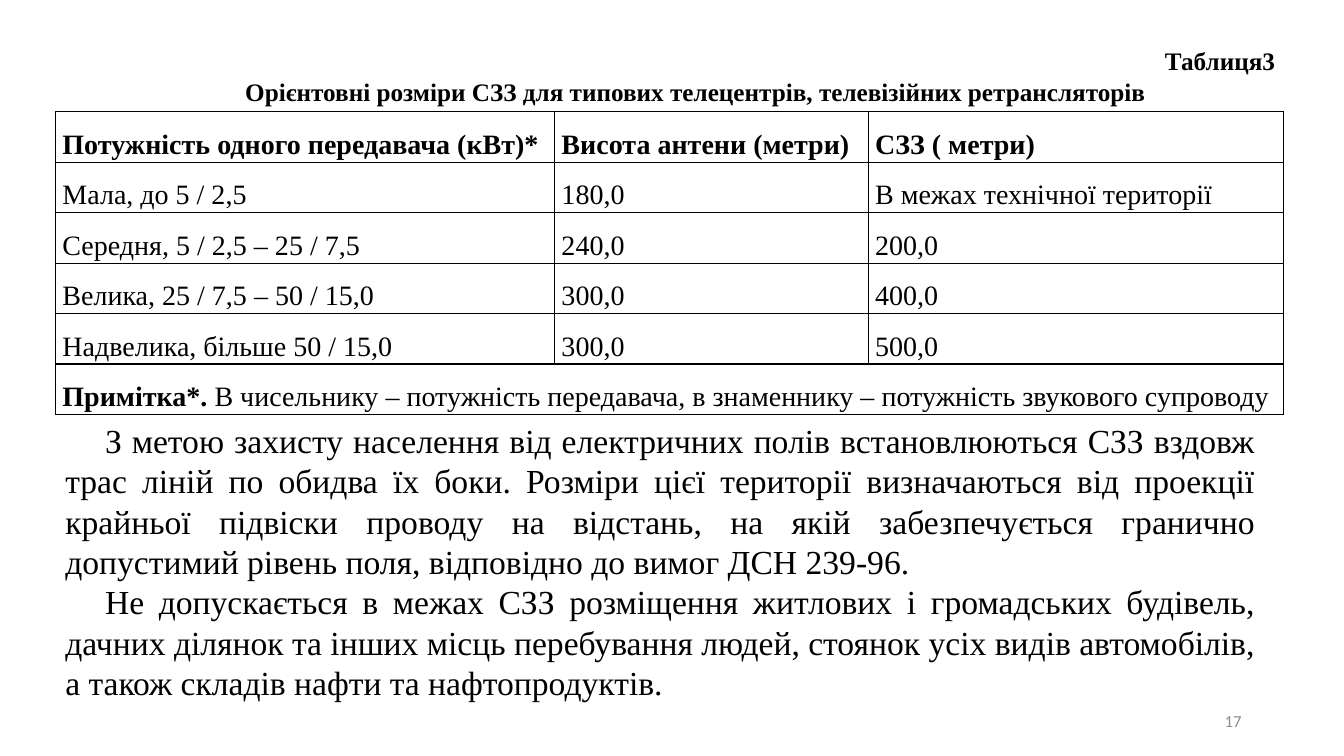
import pptx
import pptx.dml.color
import pptx.enum.text
import pptx.oxml
import pptx.oxml.ns
import pptx.util

Pt = pptx.util.Pt
ALIGN = pptx.enum.text.PP_ALIGN
MIDDLE = pptx.enum.text.MSO_ANCHOR.MIDDLE
SERIF = "Times New Roman"


def color(hex_string):
    return pptx.dml.color.RGBColor.from_string(hex_string)


def style(paragraph, size, align, bold=False, font=SERIF, ink="000000"):
    paragraph.alignment = align
    for run in paragraph.runs:
        run.font.name = font
        run.font.size = Pt(size)
        run.font.bold = bold
        run.font.color.rgb = color(ink)


deck = pptx.Presentation()
deck.slide_width, deck.slide_height = Pt(960), Pt(540)
slide = deck.slides.add_slide(deck.slide_layouts[5])

# Table number and caption
caption = slide.shapes.title
caption.left, caption.top, caption.width, caption.height = Pt(75.6), Pt(28.8), Pt(842.4), Pt(51)
caption.text_frame.text = (
    "Таблиця3\n"
    "Орієнтовні розміри СЗЗ для типових телецентрів, телевізійних ретрансляторів"
)
caption.text_frame.vertical_anchor = MIDDLE
caption.text_frame.auto_size = pptx.enum.text.MSO_AUTO_SIZE.SHAPE_TO_FIT_TEXT
for paragraph, align in zip(caption.text_frame.paragraphs, (ALIGN.RIGHT, ALIGN.CENTER)):
    style(paragraph, 18, align, bold=True)

# Zone sizes by transmitter power
zone_rows = [
    ("Потужність одного передавача (кВт)*", "Висота антени (метри)", "СЗЗ ( метри)"),
    ("Мала, до 5 / 2,5", "180,0", "В межах технічної території"),
    ("Середня, 5 / 2,5 – 25 / 7,5", "240,0", "200,0"),
    ("Велика, 25 / 7,5 – 50 / 15,0", "300,0", "400,0"),
    ("Надвелика, більше 50 / 15,0", "300,0", "500,0"),
    ("Примітка*. ", "", ""),
]
zones = slide.shapes.add_table(
    len(zone_rows), 3, Pt(39.6), Pt(79.9), Pt(877), Pt(190)
).table
zones.horz_banding = False
for column, width in zip(zones.columns, (356.5, 224, 296.5)):
    column.width = Pt(width)
note = zones.cell(5, 0)
note.merge(zones.cell(5, 2))

for row, texts in enumerate(zone_rows):
    for column, text in enumerate(texts):
        cell = zones.cell(row, column)
        cell.fill.background()
        cell.vertical_anchor = MIDDLE
        cell.margin_left = cell.margin_right = Pt(5)
        cell.margin_top = cell.margin_bottom = Pt(0)
        paragraph = cell.text_frame.paragraphs[0]
        paragraph.text = text
        paragraph.line_spacing = 1.5
        style(paragraph, 20, ALIGN.LEFT, bold=row == 0)
        # Black border on each side, placed ahead of the fill
        for position, side in enumerate(("lnL", "lnR", "lnT", "lnB")):
            border = pptx.oxml.parse_xml(
                f'<a:{side} {pptx.oxml.ns.nsdecls("a")} w="{Pt(1)}"><a:solidFill>'
                f'<a:srgbClr val="000000"/></a:solidFill></a:{side}>'
            )
            cell._tc.get_or_add_tcPr().insert(position, border)

# Footnote row: bold label, plain explanation
footnote = note.text_frame.paragraphs[0]
footnote.add_run().text = (
    "В чисельнику – потужність передавача, в знаменнику – потужність звукового супроводу"
)
style(footnote, 20, ALIGN.JUSTIFY)
footnote.runs[0].font.bold = True

# Rules for power lines
rules = slide.shapes.add_textbox(Pt(39.6), Pt(295.2), Pt(864), Pt(211)).text_frame
rules.word_wrap = True
rules.auto_size = pptx.enum.text.MSO_AUTO_SIZE.SHAPE_TO_FIT_TEXT
rules.vertical_anchor = MIDDLE
rules.text = (
    "З метою захисту населення від електричних полів встановлюються СЗЗ вздовж трас ліній "
    "по обидва їх боки. Розміри цієї території визначаються від проекції крайньої підвіски "
    "проводу на відстань, на якій забезпечується гранично допустимий рівень поля, "
    "відповідно до вимог ДСН 239-96.\n"
    "Не допускається в межах СЗЗ розміщення житлових і громадських будівель, дачних ділянок "
    "та інших місць перебування людей, стоянок усіх видів автомобілів, а також складів "
    "нафти та нафтопродуктів."
)
for paragraph in rules.paragraphs:
    style(paragraph, 24, ALIGN.JUSTIFY)
    paragraph._p.get_or_add_pPr().set("indent", str(Pt(28.35)))

# Page number
page_number = slide.shapes.add_textbox(Pt(678), Pt(500.5), Pt(216), Pt(28.8)).text_frame
page_number.word_wrap = True
page_number.vertical_anchor = MIDDLE
page_number.text = "17"
style(page_number.paragraphs[0], 12, ALIGN.RIGHT, font="Calibri", ink="8C8C8C")

deck.save("out.pptx")
